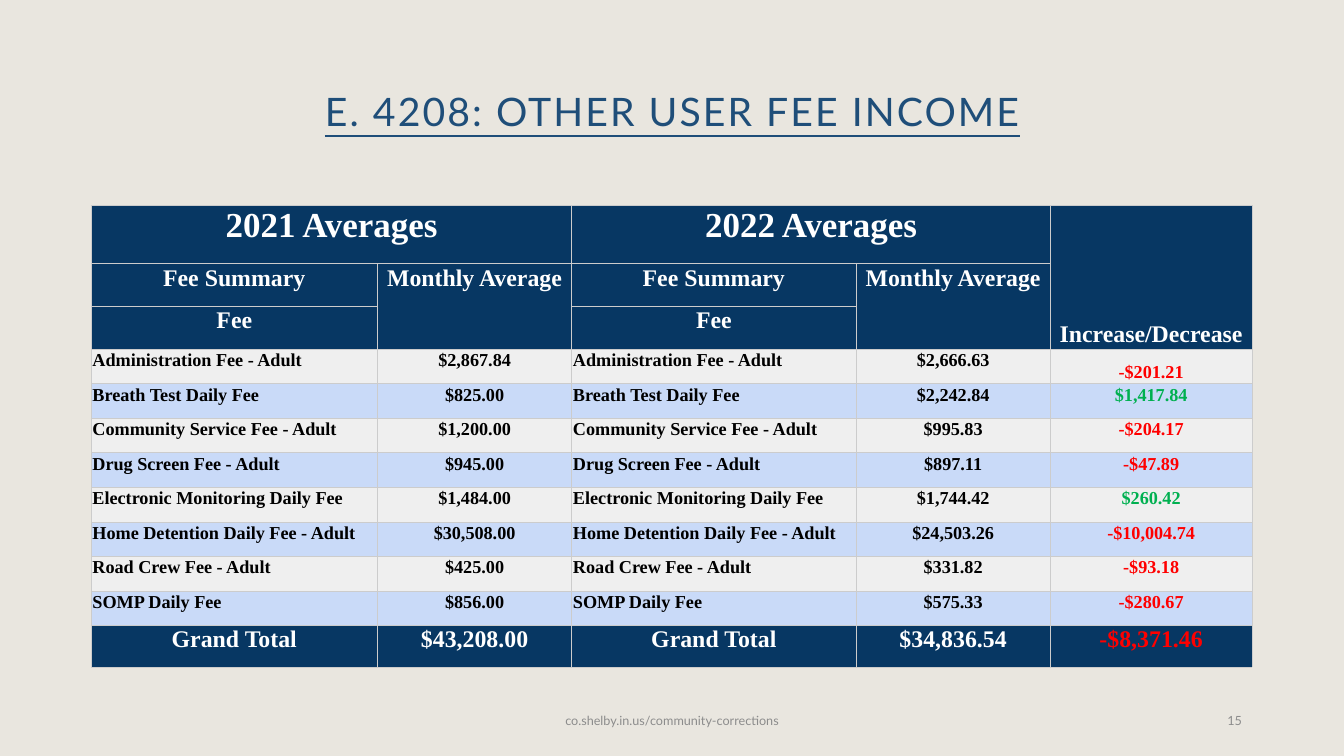
"""Build the user fee income slide with its comparison table."""
from lxml.etree import SubElement
from pptx import Presentation
from pptx.dml.color import RGBColor
from pptx.enum.text import MSO_ANCHOR, PP_ALIGN
from pptx.oxml.ns import qn
from pptx.util import Cm, Pt

TITLE = "E. 4208: OTHER USER FEE INCOME"
FOOTERS = [
    ("co.shelby.in.us/community-corrections", 11.22, 11.43, PP_ALIGN.CENTER),
    ("15", 23.93, 7.62, PP_ALIGN.RIGHT),
]
HEADERS = [
    ("2021 Averages", "", "2022 Averages", "", "Increase/Decrease"),
    ("Fee Summary", "Monthly Average", "Fee Summary", "Monthly Average", ""),
    ("Fee", "", "Fee", "", ""),
]
FEES = [
    ("Administration Fee - Adult", "$2,867.84", "$2,666.63", "-$201.21"),
    ("Breath Test Daily Fee", "$825.00", "$2,242.84", "$1,417.84"),
    ("Community Service Fee - Adult", "$1,200.00", "$995.83", "-$204.17"),
    ("Drug Screen Fee - Adult", "$945.00", "$897.11", "-$47.89"),
    ("Electronic Monitoring Daily Fee", "$1,484.00", "$1,744.42", "$260.42"),
    ("Home Detention Daily Fee - Adult", "$30,508.00", "$24,503.26", "-$10,004.74"),
    ("Road Crew Fee - Adult", "$425.00", "$331.82", "-$93.18"),
    ("SOMP Daily Fee", "$856.00", "$575.33", "-$280.67"),
    ("Grand Total", "$43,208.00", "$34,836.54", "-$8,371.46"),
]
MERGES = [(0, 0, 0, 1), (0, 2, 0, 3), (0, 4, 2, 4), (1, 1, 2, 1), (1, 3, 2, 3)]
BOTTOM_CELLS = [(0, 4), (3, 4)]
COLUMN_WIDTHS = [7.21, 4.9, 7.16, 4.9, 5.08]
ROW_HEIGHTS = [1.46, 1.08, 1.08] + [0.87] * 8 + [1.05]
COLORS = {
    "background": "E9E6DF", "title": "1F4E79", "footer": "8C8C8C",
    "navy": "073763", "gray": "EFEFEF", "blue": "C9DAF8", "border": "CCCCCC",
    "white": "FFFFFF", "black": "000000", "loss": "FF0000", "gain": "00B050",
}


def color(name):
    return RGBColor.from_string(COLORS[name])


def write(frame, text, font, size, color_name, align, bold=False):
    frame.text = text
    para = frame.paragraphs[0]
    para.alignment = align
    for span in para.runs:
        span.font.name = font
        span.font.size = Pt(size)
        span.font.bold = bold
        span.font.color.rgb = color(color_name)
    return para


def add_borders(cell):
    properties = cell._tc.get_or_add_tcPr()
    for side in ("a:lnL", "a:lnR", "a:lnT", "a:lnB"):
        line = SubElement(properties, qn(side), w=str(Pt(0.5)))
        fill = SubElement(line, qn("a:solidFill"))
        SubElement(fill, qn("a:srgbClr"), val=COLORS["border"])


def add_title(page):
    box = page.shapes.title
    box.left, box.top, box.width, box.height = Cm(2.34), Cm(1.02), Cm(29.21), Cm(3.68)
    box.text_frame.vertical_anchor = MSO_ANCHOR.MIDDLE
    para = write(box.text_frame, TITLE, "Lato", 28, "title", PP_ALIGN.CENTER)
    para.line_spacing = 0.9
    span = para.runs[0]
    span.font.underline = True
    span.font._element.set("spc", "150")


def add_footers(page):
    for text, left, width, align in FOOTERS:
        box = page.shapes.add_textbox(Cm(left), Cm(17.65), Cm(width), Cm(1.02))
        box.text_frame.word_wrap = True
        box.text_frame.vertical_anchor = MSO_ANCHOR.MIDDLE
        para = write(box.text_frame, text, "Lato", 9, "footer", align)
        para.space_after = Pt(6)


def format_cell(cell, text, row, column):
    is_total = row == len(ROW_HEIGHTS) - 1
    is_header = row < len(HEADERS)
    is_banner = is_header or is_total
    fill = "navy" if is_banner else ("blue" if row % 2 == 0 else "gray")
    ink = "white" if is_banner else "black"
    if column == 4 and not is_header:
        ink = "loss" if text.startswith("-") else "gain"
    size = 25 if row == 0 and column < 4 else 17 if is_banner else 13
    is_name = column in (0, 2) and not is_banner
    align = PP_ALIGN.LEFT if is_name else PP_ALIGN.CENTER
    write(cell.text_frame, text, "Times New Roman", size, ink, align, bold=True)
    cell.margin_left = cell.margin_right = Cm(0.03)
    cell.margin_top = cell.margin_bottom = Cm(0.03)
    at_bottom = (row, column) in BOTTOM_CELLS
    cell.vertical_anchor = MSO_ANCHOR.BOTTOM if at_bottom else MSO_ANCHOR.TOP
    add_borders(cell)
    cell.fill.solid()
    cell.fill.fore_color.rgb = color(fill)


def add_fee_table(page):
    rows = HEADERS + [(fee, before, fee, after, change)
                      for fee, before, after, change in FEES]
    table = page.shapes.add_table(
        len(rows), len(COLUMN_WIDTHS), Cm(2.3), Cm(5.18),
        Cm(sum(COLUMN_WIDTHS)), Cm(sum(ROW_HEIGHTS))).table
    for column, width in zip(table.columns, COLUMN_WIDTHS):
        column.width = Cm(width)
    for row, height in zip(table.rows, ROW_HEIGHTS):
        row.height = Cm(height)
    for row, texts in enumerate(rows):
        for column, text in enumerate(texts):
            format_cell(table.cell(row, column), text, row, column)
    for top, left, bottom, right in MERGES:
        table.cell(top, left).merge(table.cell(bottom, right))


def main():
    deck = Presentation()
    deck.slide_width, deck.slide_height = Cm(33.87), Cm(19.05)
    page = deck.slides.add_slide(deck.slide_layouts[5])
    page.background.fill.solid()
    page.background.fill.fore_color.rgb = color("background")
    add_title(page)
    add_footers(page)
    add_fee_table(page)
    deck.save("out.pptx")


if __name__ == "__main__":
    main()
